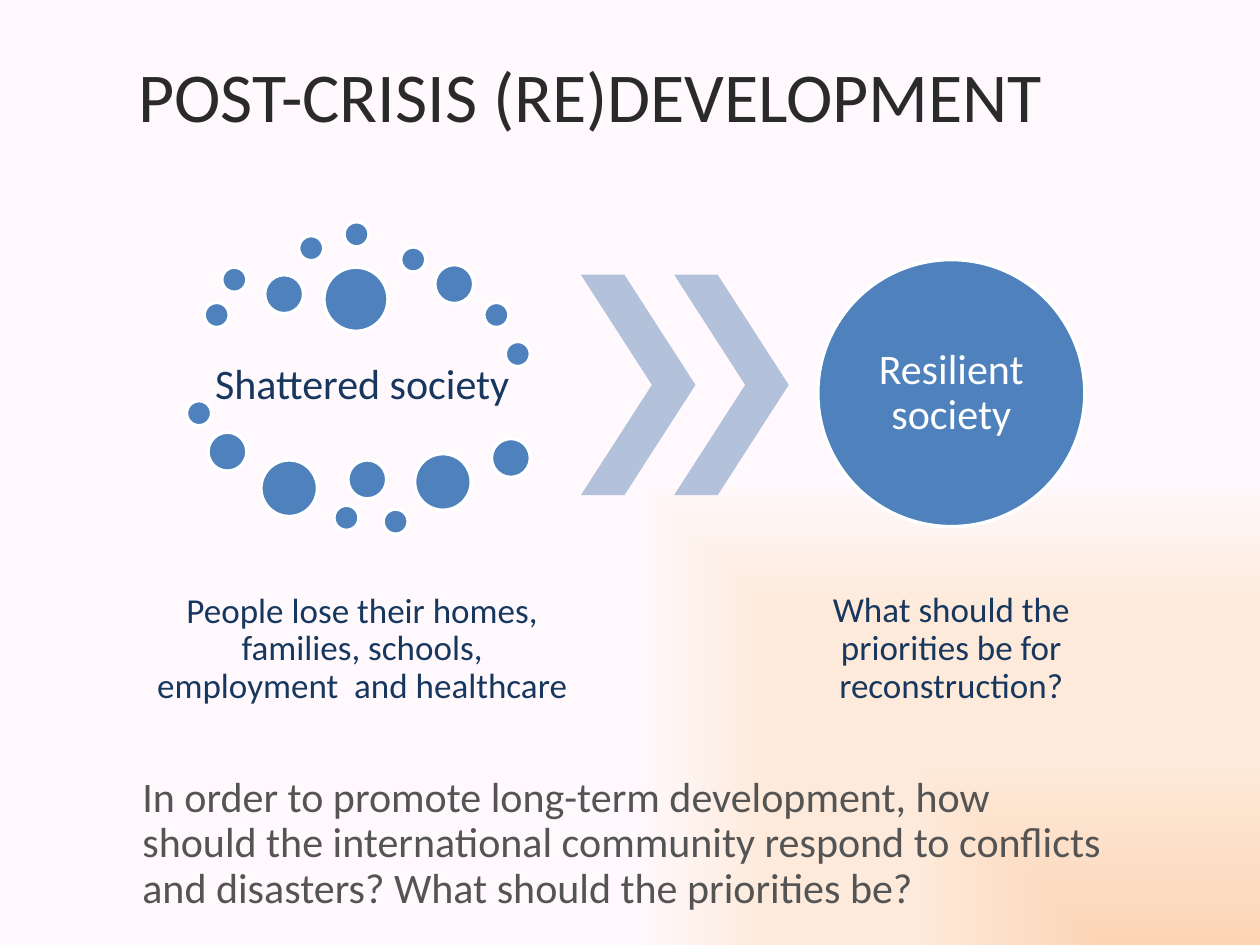
from pptx import Presentation
from pptx.dml.color import RGBColor
from pptx.enum.shapes import MSO_SHAPE
from pptx.enum.text import MSO_ANCHOR, PP_ALIGN
from pptx.oxml import parse_xml
from pptx.oxml.ns import nsdecls, qn
from pptx.util import Inches, Pt

BLUE = RGBColor(0x4F, 0x81, 0xBD)
PALE = RGBColor(0xB3, 0xC1, 0xDB)
NAVY = RGBColor(0x17, 0x37, 0x5E)
WHITE = RGBColor(0xFF, 0xFF, 0xFF)
BLACK = RGBColor(0x2A, 0x2A, 0x2A)
GREY = RGBColor(0x54, 0x54, 0x54)


def write(box, text, size, color, align, anchor, inset):
    frame = box.text_frame
    frame.word_wrap = True
    frame.vertical_anchor = anchor
    frame.margin_left = frame.margin_right = Inches(inset)
    frame.margin_top = frame.margin_bottom = Inches(min(inset, 0.05))
    frame.text = text
    para = frame.paragraphs[0]
    para.alignment = align
    para.line_spacing = 0.9
    para.font.name = "Calibri"
    para.font.size = Pt(size)
    para.font.color.rgb = color
    return para


def draw(kind, left, top, width, height, color):
    shape = slide.shapes.add_shape(
        kind, Inches(left), Inches(top), Inches(width), Inches(height))
    shape.shadow.inherit = False
    shape.fill.solid()
    shape.fill.fore_color.rgb = color
    shape.line.fill.background()
    return shape


prs = Presentation()
prs.slide_width = Inches(10)
prs.slide_height = Inches(7.5)
slide = prs.slides.add_slide(prs.slide_layouts[5])

slide.background.fill.gradient()
grad = next(slide.element.iter(qn("a:gradFill")))
grad.getparent().replace(grad, parse_xml(
    f'<a:gradFill {nsdecls("a")} rotWithShape="1"><a:gsLst>'
    '<a:gs pos="0"><a:srgbClr val="FCD5B5"/></a:gs>'
    '<a:gs pos="40000"><a:srgbClr val="FDEADA"/></a:gs>'
    '<a:gs pos="70000"><a:srgbClr val="FDEADA"/></a:gs>'
    '<a:gs pos="100000"><a:srgbClr val="FFF9FE"><a:alpha val="83000"/></a:srgbClr></a:gs>'
    '</a:gsLst><a:path path="rect"><a:fillToRect l="100000" t="100000"/></a:path>'
    '</a:gradFill>'))

title = slide.shapes.title
title.left, title.top = Inches(1), Inches(0.3)
title.width, title.height = Inches(8), Inches(1.45)
write(title, "POST-CRISIS (RE)DEVELOPMENT", 40, BLACK, PP_ALIGN.LEFT, MSO_ANCHOR.BOTTOM, 0.1)
title.text_frame.margin_bottom = Inches(0.66)

dots = [
    (0.2, [(1.62, 2.4), (1.76, 2.12), (2.37, 1.87), (2.73, 1.76), (3.18, 1.96),
           (3.84, 2.4), (4.01, 2.71), (1.48, 3.18), (2.65, 4.01), (3.04, 4.04)]),
    (0.31, [(2.1, 2.18), (3.45, 2.1), (1.65, 3.43), (2.76, 3.65), (3.9, 3.48)]),
    (0.45, [(2.07, 3.65), (3.29, 3.6)]),
    (0.51, [(2.57, 2.12)]),
    (2.12, [(6.49, 2.06)]),
]
for size, spots in dots:
    for left, top in spots:
        dot = draw(MSO_SHAPE.OVAL, left, top, size, size, BLUE)
        dot.line.color.rgb = WHITE
        dot.line.width = Pt(2)

for left in (4.61, 5.35):
    arrow = draw(MSO_SHAPE.CHEVRON, left, 2.18, 0.91, 1.75, PALE)
    arrow.adjustments[0] = 0.62

MID = (PP_ALIGN.CENTER, MSO_ANCHOR.MIDDLE)
TOP = (PP_ALIGN.LEFT, MSO_ANCHOR.TOP)
labels = [
    ("Shattered society", (1.63, 2.65, 2.49, 0.82), 24, NAVY, MID, 0.03),
    ("People lose their homes, families, schools, employment  and healthcare",
     (1.14, 4.72, 3.47, 0.87), 20, NAVY, MID, 0.03),
    ("Resilient society", (6.8, 2.37, 1.5, 1.5), 24, WHITE, MID, 0),
    ("What should the priorities be for reconstruction?",
     (6.27, 4.19, 2.56, 1.92), 20, NAVY, MID, 0.03),
    ("In order to promote long-term development, how should the international "
     "community respond to conflicts and disasters? What should the priorities be?",
     (0.98, 6.11, 7.89, 1.19), 24, GREY, TOP, 0.1),
]
for text, place, size, color, (align, anchor), inset in labels:
    box = slide.shapes.add_textbox(*map(Inches, place))
    para = write(box, text, size, color, align, anchor, inset)
    if align == PP_ALIGN.LEFT:
        box.text_frame.margin_left = Inches(0.15)

prs.save("out.pptx")
